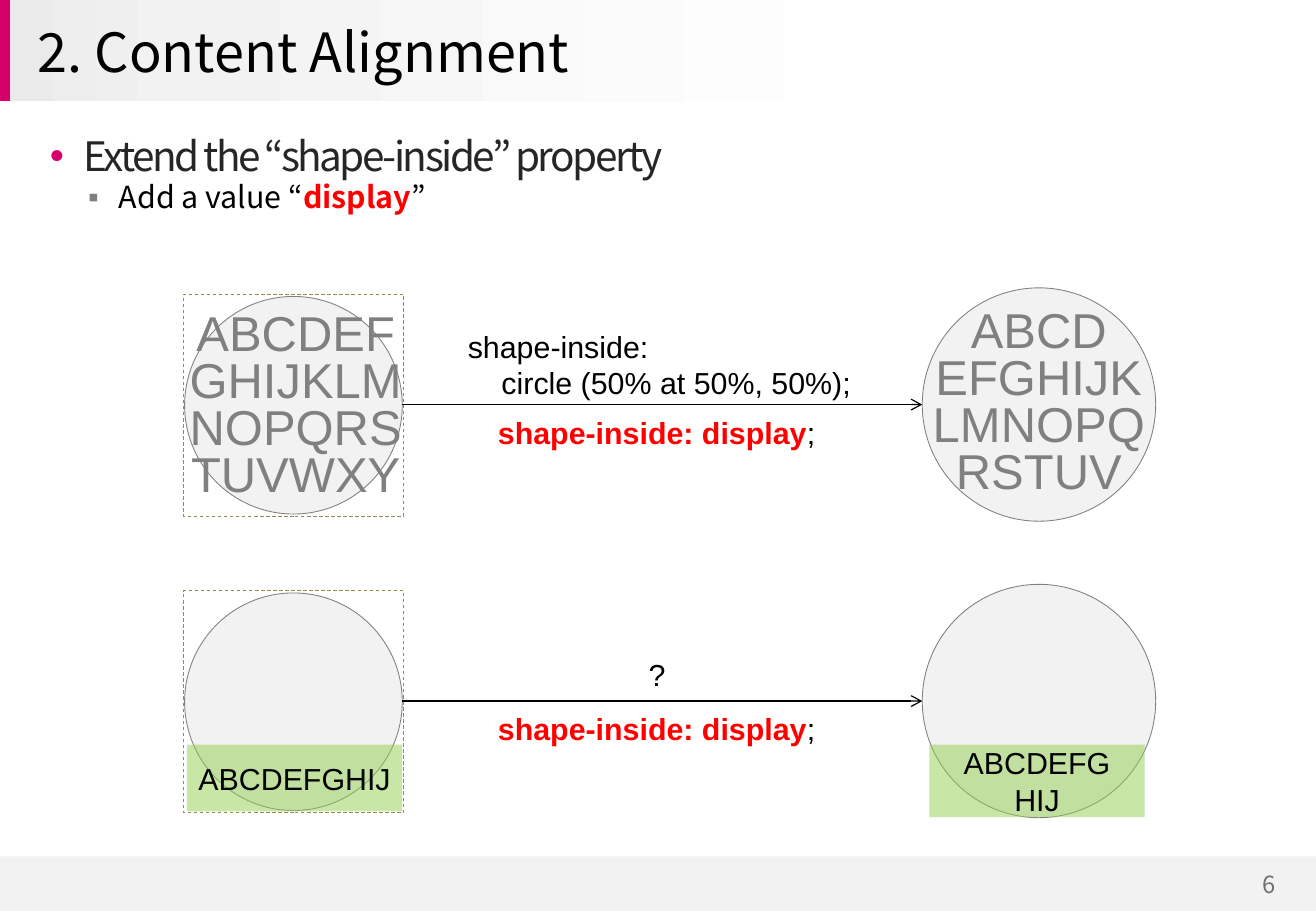
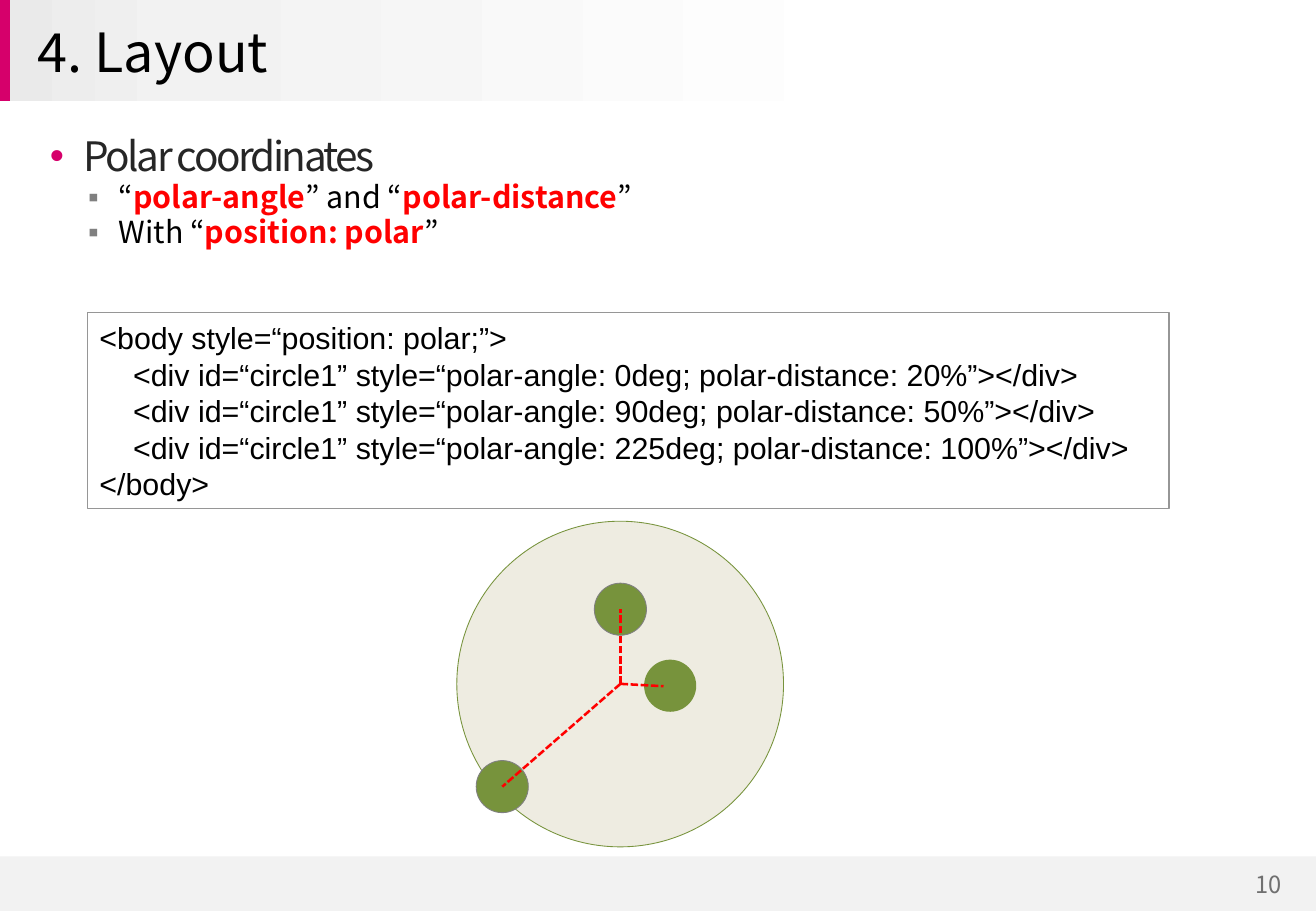
from lxml import etree
from pptx import Presentation
from pptx import oxml, util as u
from pptx.dml.color import RGBColor
from pptx.enum import dml, shapes, text
from pptx.oxml import ns

COLORS = {
    "accent": "D6006B", "band": "F2F2F2", "gray": "808080", "number": "707070",
    "heading": "262626", "black": "000000", "red": "FF0000", "frame": "948A54",
    "label": "92D050", "dot": "77933C", "disc": "EEECE1", "border": "969696",
}
HEAD_FONT, BODY_FONT = "Noto Sans CJK KR", "Arial"
OVAL, RECT = shapes.MSO_SHAPE.OVAL, shapes.MSO_SHAPE.RECTANGLE
LEFT, CENTER = text.PP_ALIGN.LEFT, text.PP_ALIGN.CENTER


def draw(slide, kind, box, fill=None, line=None, width=0.5):
    lengths = [u.Cm(value) for value in box]
    if kind is None:
        return slide.shapes.add_textbox(*lengths)
    shape = slide.shapes.add_shape(kind, *lengths)
    shape.shadow.inherit = False
    if fill:
        shape.fill.solid()
        shape.fill.fore_color.rgb = RGBColor.from_string(COLORS[fill])
    else:
        shape.fill.background()
    if line:
        shape.line.color.rgb = RGBColor.from_string(COLORS[line])
        shape.line.width = u.Pt(width)
    else:
        shape.line.fill.background()
    return shape


def write(shape, lines, size=18, color="black", font=BODY_FONT, align=LEFT,
          spacing=None, inset=True, wrap=False):
    frame = shape.text_frame
    frame.word_wrap = wrap
    frame.auto_size = text.MSO_AUTO_SIZE.NONE
    if not inset:
        frame.margin_left = frame.margin_right = frame.margin_top = frame.margin_bottom = 0
        frame.vertical_anchor = text.MSO_ANCHOR.MIDDLE
    for index, line in enumerate(lines):
        paragraph = frame.add_paragraph() if index else frame.paragraphs[0]
        pieces = line.split("*")
        paragraph.text = pieces[0]
        for piece in pieces[1:]:
            paragraph.add_run().text = piece
        paragraph.alignment = align
        if spacing:
            paragraph.line_spacing = spacing
        for run in paragraph.runs:
            strong = run.text in pieces[1::2]
            run.font.name, run.font.size, run.font.bold = font, u.Pt(size), strong
            run.font.color.rgb = RGBColor.from_string(COLORS["red" if strong else color])
    return frame


prs = Presentation()
prs.slide_width, prs.slide_height = u.Cm(27.51), u.Cm(19.05)
layout = prs.slide_layouts[1]
for holder, box in zip(layout.placeholders, [(0.53, 0.2, 26.42, 1.73), (0.53, 2.72, 26.44, 15.01)]):
    holder.left, holder.top, holder.width, holder.height = [u.Cm(value) for value in box]

pages = [
    ("2. Content Alignment", "6",
     ["Extend the “shape-inside” property", "Add a value “*display*”"]),
    ("4. Layout", "10",
     ["Polar coordinates", "“*polar-angle*” and “*polar-distance*”", "With “*position: polar*”"]),
]
bullets = [(0.97, -0.71, "accent", "•"), (1.7, -0.64, "gray", "▪")]
slides = []
for title, number, points in pages:
    slide = prs.slides.add_slide(layout)
    slides.append(slide)
    heading, body = slide.placeholders
    write(heading, [title], 32, font=HEAD_FONT, wrap=True).vertical_anchor = text.MSO_ANCHOR.MIDDLE
    outline = write(body, points, font=HEAD_FONT, spacing=0.9, wrap=True)
    for index, paragraph in enumerate(outline.paragraphs):
        level = min(index, 1)
        margin, indent, color, mark = bullets[level]
        paragraph.level = level
        properties = paragraph._p.get_or_add_pPr()
        properties.set("marL", str(u.Cm(margin)))
        properties.set("indent", str(u.Cm(indent)))
        tint = etree.SubElement(properties, ns.qn("a:buClr"))
        etree.SubElement(tint, ns.qn("a:srgbClr"), val=COLORS[color])
        etree.SubElement(properties, ns.qn("a:buFont"), typeface=BODY_FONT)
        etree.SubElement(properties, ns.qn("a:buChar"), char=mark)
        paragraph.space_before = u.Pt(1.4 * level)
    topic = outline.paragraphs[0].runs[0]
    topic.font.size = u.Pt(24)
    topic.font.color.rgb = RGBColor.from_string(COLORS["heading"])
    topic._r.get_or_add_rPr().set("spc", "-150")
    write(draw(slide, None, (25.65, 18.06, 1.75, 0.86)), [number], 14, "number", HEAD_FONT, CENTER)

alignment, polar = slides

footer = draw(alignment, RECT, (0, 17.91, 27.51, 1.14), "band")
header = draw(alignment, RECT, (0.21, 0, 27.3, 2.11), "band")
edge = draw(alignment, RECT, (0, 0, 0.21, 2.11), "accent")
stops = "".join(
    f'<a:gs pos="{position}000"><a:srgbClr val="{color}"/></a:gs>'
    for position, color in [(0, "EAEAEA"), (13, "F2F2F2"), (67, "FFFFFF")])
header_properties = header.element.spPr
header_properties.replace(
    header_properties.find(ns.qn("a:solidFill")),
    oxml.parse_xml(f'<a:gradFill {ns.nsdecls("a")}><a:gsLst>{stops}</a:gsLst>'
                   '<a:lin ang="0" scaled="0"/></a:gradFill>'))
for index, band in enumerate([footer, header, edge]):
    band.element.nvSpPr.cNvPr.set("id", str(20 + index))
    layout.shapes.element.append(band.element)

ROW_GAP = 6.2
arrows = []
for drop in (0, ROW_GAP):
    target = draw(alignment, OVAL, (19.28, 6.02 + drop, 4.88, 4.88), "band", "gray")
    draw(alignment, OVAL, (3.86, 6.2 + drop, 4.55, 4.55), "band", "gray")
    frame = draw(alignment, RECT, (3.84, 6.15 + drop, 4.6, 4.65), None, "frame")
    frame.line.dash_style = dml.MSO_LINE.DASH
    caption = draw(alignment, None, (10.16, 8.53 + drop, 7.21, 1.02))
    write(caption, ["*shape-inside: display*;"])
    arrows.append((8.41, 8.46 + drop, 19.28, 8.46 + drop))
    if not drop:
        write(target, ["ABCD\vEFGHIJK\vLMNOPQ\vRSTUV"], 29, "gray",
              align=CENTER, spacing=0.8, inset=False)
        letters = draw(alignment, None, (3.58, 5.92, 5.21, 5.21))
        write(letters, ["ABCDEF", "GHIJKLM", "NOPQRS\vTUVWXY"], 29, "gray",
              align=CENTER, spacing=0.8, inset=False)

for left, height, letters in [(19.43, 1.52, "ABCDEFG\vHIJ"), (3.91, 1.4, "ABCDEFGHIJ")]:
    label = draw(alignment, RECT, (left, 15.57, 4.5, height), "label")
    tint = label.element.spPr.find(ns.qn("a:solidFill"))[0]
    etree.SubElement(tint, ns.qn("a:alpha"), val="50000")
    write(label, [letters], align=CENTER, inset=False)

write(draw(alignment, None, (9.53, 6.73, 8.61, 1.8)),
      ["shape-inside:\v    circle (50% at 50%, 50%);"])
write(draw(alignment, None, (13.31, 13.59, 0.86, 1.02)), ["?"])

draw(polar, OVAL, (9.55, 10.9, 6.83, 6.81), "disc", "dot")
DOT = 1.09
for x, y, outline in [(12.97, 12.74, "gray"), (10.5, 16.45, "gray"), (14.01, 14.34, None)]:
    draw(polar, OVAL, (x - DOT / 2, y - DOT / 2, DOT, DOT), "dot", outline)
rays = [(12.97, 14.3, x, y) for x, y in [(13.87, 14.35), (12.97, 12.74), (10.5, 16.45)]]

for slide, ends, color, width in [(alignment, arrows, "black", 0.75), (polar, rays, "red", 1.5)]:
    for end in ends:
        connector = slide.shapes.add_connector(
            shapes.MSO_CONNECTOR.STRAIGHT, *[u.Cm(value) for value in end])
        connector.line.color.rgb = RGBColor.from_string(COLORS[color])
        connector.line.width = u.Pt(width)
        if slide is polar:
            connector.line.dash_style = dml.MSO_LINE.SQUARE_DOT
        else:
            etree.SubElement(connector.line._get_or_add_ln(), ns.qn("a:tailEnd"), type="arrow")
        etree.SubElement(connector.element.spPr, ns.qn("a:effectLst"))

write(draw(polar, RECT, (1.83, 6.53, 22.61, 4.11), None, "border", 0.75), [
    "<body style=“position: polar;”>",
    *[f"    <div id=“circle1” style=“polar-angle: {angle}deg; polar-distance: {distance}%”></div>"
      for angle, distance in [(0, 20), (90, 50), (225, 100)]],
    "</body>",
], wrap=True)

prs.save("out.pptx")
